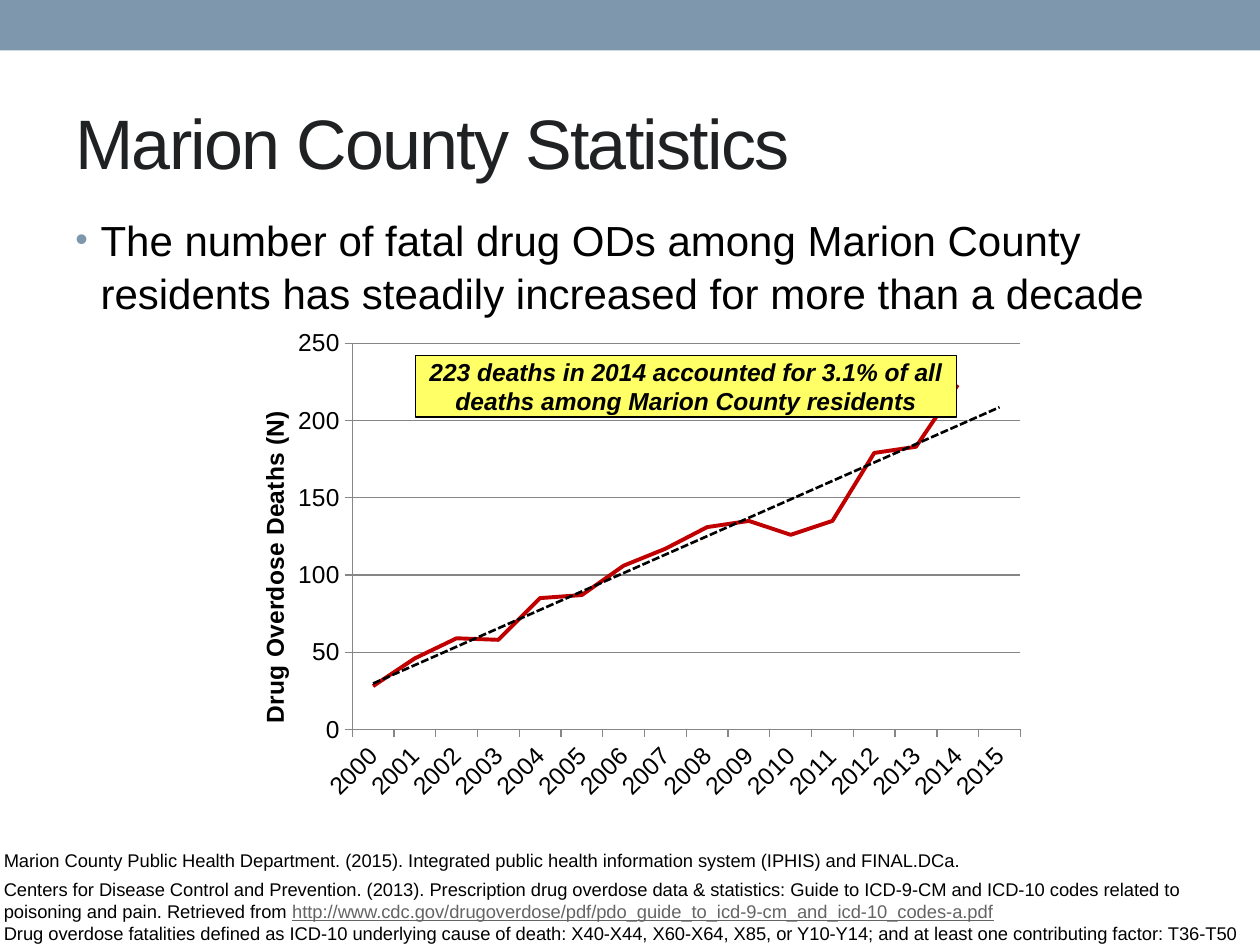
from lxml import etree
from pptx import Presentation
from pptx.chart.data import CategoryChartData
from pptx.dml.color import RGBColor
from pptx.enum.chart import XL_CHART_TYPE, XL_TICK_MARK
from pptx.enum.shapes import MSO_SHAPE
from pptx.enum.text import MSO_ANCHOR, PP_ALIGN
from pptx.oxml import parse_xml
from pptx.oxml.ns import nsdecls, qn
from pptx.util import Pt

LINE = XL_CHART_TYPE.LINE
OUT = XL_TICK_MARK.OUTSIDE
RECT = MSO_SHAPE.RECTANGLE
MID, TOP = MSO_ANCHOR.MIDDLE, MSO_ANCHOR.TOP
CENTER = PP_ALIGN.CENTER

BLUE, BLACK, GRAY, RED = "7E97AD", "000000", "868686", "C00000"

DEATHS = [28, 46, 59, 58, 85, 87, 106, 117, 131, 135, 126, 135, 179, 183, 223, None]
YEARS = [str(year) for year in range(2000, 2016)]

TREND = f"""<c:trendline {nsdecls('c', 'a')}>
<c:spPr><a:ln w="19050"><a:solidFill><a:srgbClr val="{BLACK}"/></a:solidFill>
<a:prstDash val="sysDash"/></a:ln></c:spPr>
<c:trendlineType val="linear"/><c:dispRSqr val="0"/><c:dispEq val="0"/></c:trendline>"""


def hue(code):
    return RGBColor.from_string(code)


def put(item, values):
    for name, value in values.items():
        setattr(item, name, value)


def place(**parts):
    marks = "".join(f'<c:{key} val="{value}"/>' for key, value in parts.items())
    return parse_xml(f"<c:layout {nsdecls('c')}><c:manualLayout>{marks}"
                     "</c:manualLayout></c:layout>")


def clear(node):
    for old in node.findall(qn("c:layout")):
        node.remove(old)


class Deck:
    face = "Arial"

    def __init__(self, wide, high):
        self.show = Presentation()
        put(self.show, {"slide_width": Pt(wide), "slide_height": Pt(high)})
        self.slide = self.show.slides.add_slide(self.show.slide_layouts[6])

    def font(self, font, size, color=BLACK, **more):
        put(font, {"name": self.face, "size": Pt(size), **more})
        font.color.rgb = hue(color)

    def stroke(self, line, color, width):
        line.color.rgb = hue(color)
        line.width = Pt(width)

    def frame(self, shape, pad, anchor):
        frame = shape.text_frame
        sides = ("left", "right", "top", "bottom")
        put(frame, {f"margin_{side}": Pt(pad) for side in sides})
        put(frame, {"word_wrap": True, "vertical_anchor": anchor})
        return frame

    def say(self, para, text, size, color=BLACK, **more):
        run = para.add_run()
        run.text = text
        self.font(run.font, size, color, **more)
        return run

    def text(self, box, pad=0, anchor=TOP):
        shape = self.slide.shapes.add_textbox(*map(Pt, box))
        return self.frame(shape, pad, anchor)

    def rect(self, box, fill, edge=None):
        shape = self.slide.shapes.add_shape(RECT, *map(Pt, box))
        shape.shadow.inherit = False
        shape.fill.solid()
        shape.fill.fore_color.rgb = hue(fill)
        if edge:
            self.stroke(shape.line, edge, 0.75)
        else:
            shape.line.fill.background()
        return shape

    def bullet(self, para, color, scale):
        props = para._p.get_or_add_pPr()
        put(para, {"space_before": Pt(4.8), "space_after": Pt(6), "line_spacing": 1.05})
        props.set("marL", str(Pt(14.4)))
        props.set("indent", str(Pt(-14.4)))
        tint = etree.SubElement(props, qn("a:buClr"))
        etree.SubElement(tint, qn("a:srgbClr"), val=color)
        etree.SubElement(props, qn("a:buSzPct"), val=str(scale * 1000))
        etree.SubElement(props, qn("a:buFont"), typeface=self.face)
        etree.SubElement(props, qn("a:buChar"), char="•")

    def chart(self, box, cats, values, title):
        data = CategoryChartData()
        data.categories = cats
        data.add_series("Series 1", values)
        chart = self.slide.shapes.add_chart(LINE, *map(Pt, box), data).chart
        put(chart, {"has_legend": False, "has_title": False})
        self.font(chart.font, 12)
        area = chart._chartSpace.chart.plotArea
        clear(area)
        area.insert(0, place(layoutTarget="inner", xMode="edge", yMode="edge",
                             x=0.16, y=0.05, w=0.82, h=0.79))

        line = chart.plots[0].series[0]
        line.smooth = False
        self.stroke(line.format.line, RED, 2.25)
        line._element.find(qn("c:cat")).addprevious(parse_xml(TREND))

        across, up = chart.category_axis, chart.value_axis
        for axis in (across, up):
            axis.major_tick_mark = OUT
            self.font(axis.tick_labels.font, 14)
            self.stroke(axis.format.line, GRAY, 0.75)
        across._element.txPr.bodyPr.set("rot", "-2700000")
        put(up, {"minimum_scale": 0, "maximum_scale": 250, "major_unit": 50,
                 "has_major_gridlines": True})
        self.stroke(up.major_gridlines.format.line, GRAY, 0.75)
        put(up.tick_labels, {"number_format": "#,##0", "number_format_is_linked": False})

        head = up.axis_title
        self.say(head.text_frame.paragraphs[0], title, 14, bold=True)
        body = head._element.find(".//" + qn("a:bodyPr"))
        body.set("rot", "-5400000")
        body.set("vert", "horz")
        clear(head._element)
        head._element.find(qn("c:tx")).addnext(
            place(xMode="edge", yMode="edge", x=0.04, y=0.18))


def main():
    deck = Deck(720, 540)
    deck.rect((0, 0, 720, 28.8), BLUE)

    title = deck.text((36, 41.8, 570, 77.8), 7.2, MID).paragraphs[0]
    run = deck.say(title, "Marion County Statistics", 40, "1F2123")
    run.font._element.set("spc", "-100")

    point = deck.text((36, 113.8, 648, 396), 7.2).paragraphs[0]
    deck.bullet(point, BLUE, 85)
    deck.say(point, "The number of fatal drug ODs among Marion County residents "
             "has steadily increased for more than a decade", 24)

    deck.chart((126.7, 182.2, 465.8, 279.4), YEARS, DEATHS, "Drug Overdose Deaths (N)")

    note = deck.rect((237.6, 203, 308.9, 35.3), "FFFF66", BLACK)
    para = deck.frame(note, 0.72, MID).paragraphs[0]
    para.alignment = CENTER
    deck.say(para, "223 deaths in 2014 accounted for 3.1% of all deaths among "
             "Marion County residents", 14, bold=True, italic=True)

    first = deck.text((2.2, 485.3, 712, 13)).paragraphs[0]
    deck.say(first, "Marion County Public Health Department. (2015). Integrated public "
             "health information system (IPHIS) and FINAL.DCa.", 10.5)

    notes = deck.text((2.2, 501.8, 712, 38.2))
    guide = notes.paragraphs[0]
    deck.say(guide, "Centers for Disease Control and Prevention. (2013). Prescription drug "
             "overdose data & statistics: Guide to ICD-9-CM and ICD-10 codes related to "
             "poisoning and pain. Retrieved from ", 10.5)
    deck.say(guide, "http://www.cdc.gov/drugoverdose/pdf/"
             "pdo_guide_to_icd-9-cm_and_icd-10_codes-a.pdf", 10.5, "646464", underline=True)
    deck.say(notes.add_paragraph(), "Drug overdose fatalities defined as ICD-10 underlying "
             "cause of death: X40-X44, X60-X64, X85, or Y10-Y14; and at least one "
             "contributing factor: T36-T50", 10.5)

    deck.show.save("out.pptx")


if __name__ == "__main__":
    main()
